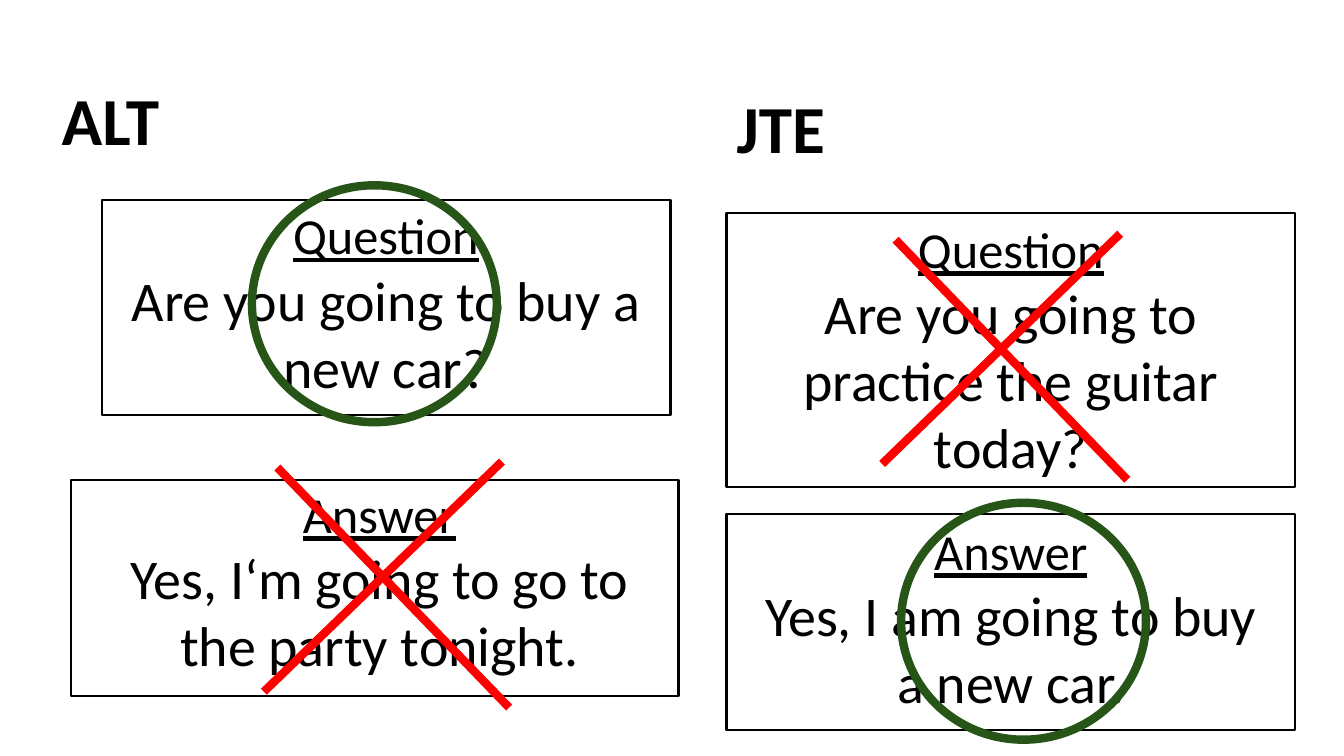
from typing import NamedTuple

from pptx import Presentation, util as u
from pptx.dml.color import RGBColor
from pptx.enum import shapes, text
from pptx.oxml.ns import qn
from lxml import etree

COLORS = {"ink": "000000", "wrong": "FF0000", "right": "275417"}
FONT = "Calibri"


class Box(NamedTuple):
    """Left, top, width and height in centimetres."""
    x: float
    y: float
    w: float
    h: float

    def emu(self) -> list[int]:
        return [u.Cm(v) for v in self]


class Card(NamedTuple):
    label: str
    sentence: str
    frame: Box
    words: Box


class Heading(NamedTuple):
    idx: int
    label: str
    box: Box


class Mark(NamedTuple):
    x: float
    y: float


HEADINGS = [
    Heading(1, "ALT", Box(1.3, 1.88, 14.33, 2.29)),
    Heading(3, "JTE", Box(18.31, 2.08, 14.4, 2.29)),
]
CARDS = [
    Card("Question", "Are you going to buy a new car?",
         Box(2.57, 5.03, 14.33, 5.44), Box(2.92, 5.03, 13.61, 5.21)),
    Card("Answer", "Yes, I‘m going to go to the party tonight.",
         Box(1.78, 12.09, 15.32, 5.44), Box(2.29, 12.04, 14.55, 5.21)),
    Card("Question", "Are you going to practice the guitar today?",
         Box(18.31, 5.36, 14.33, 6.91), Box(18.31, 5.36, 14.33, 6.93)),
    Card("Answer", "Yes, I am going to buy a new car.",
         Box(18.31, 12.95, 14.33, 5.44), Box(18.67, 12.98, 13.61, 5.21)),
]
CROSSES = [Mark(22.23, 5.89), Mark(6.65, 11.63)]
CROSS_STROKES = [(6, 0, 0, 5.8), (6.18, 6.2, 0.34, 0.15)]
RINGS = [Mark(6.35, 4.67), Mark(22.71, 12.67)]
RING_W, RING_H = 6.17, 5.97


def color(name: str) -> RGBColor:
    return RGBColor.from_string(COLORS[name])


def style(p, size: float, bold: bool = False, underline: bool = False) -> None:
    for r in p.runs:
        r.font.name, r.font.size = FONT, u.Pt(size)
        r.font.bold, r.font.underline = bold, underline
        r.font.color.rgb = color("ink")


def set_line(sp, name: str, width: float) -> None:
    sp.line.color.rgb = color(name)
    sp.line.width = u.Pt(width)


def add_outline(s, kind, box: Box, name: str, width: float) -> None:
    sp = s.shapes.add_shape(kind, *box.emu())
    sp.shadow.inherit = False
    sp.fill.background()
    set_line(sp, name, width)


def add_heading(s, heading: Heading) -> None:
    sp = s.placeholders[heading.idx]
    sp.left, sp.top, sp.width, sp.height = heading.box.emu()
    tf = sp.text_frame
    tf.text = heading.label
    tf.vertical_anchor = text.MSO_ANCHOR.BOTTOM
    tf.auto_size = text.MSO_AUTO_SIZE.NONE
    p = tf.paragraphs[0]
    p.line_spacing, p.space_before = 0.9, u.Pt(10)
    style(p, 48, bold=True)


def add_card(s, card: Card) -> None:
    add_outline(s, shapes.MSO_SHAPE.RECTANGLE, card.frame, "ink", 1.5)
    tf = s.shapes.add_textbox(*card.words.emu()).text_frame
    tf.word_wrap = True
    tf.auto_size = text.MSO_AUTO_SIZE.SHAPE_TO_FIT_TEXT
    tf.text = f"{card.label}\n{card.sentence}"
    label, sentence = tf.paragraphs
    style(label, 36, underline=True)
    style(sentence, 40)
    for p in tf.paragraphs:
        p.alignment = text.PP_ALIGN.CENTER


def add_cross(s, mark: Mark) -> None:
    for x1, y1, x2, y2 in CROSS_STROKES:
        sp = s.shapes.add_connector(
            shapes.MSO_CONNECTOR.STRAIGHT,
            u.Cm(mark.x + x1), u.Cm(mark.y + y1),
            u.Cm(mark.x + x2), u.Cm(mark.y + y2))
        set_line(sp, "wrong", 6)
        etree.SubElement(sp._element.spPr, qn("a:effectLst"))


def main() -> None:
    prs = Presentation()
    prs.slide_width, prs.slide_height = u.Cm(33.87), u.Cm(19.05)
    s = prs.slides.add_slide(prs.slide_layouts.get_by_name("Comparison"))

    # Column headings; unused placeholders go
    for heading in HEADINGS:
        add_heading(s, heading)
    used = {heading.idx for heading in HEADINGS}
    for sp in list(s.placeholders):
        if sp.placeholder_format.idx not in used:
            sp._element.getparent().remove(sp._element)

    # Question and answer cards
    for card in CARDS:
        add_card(s, card)

    # Wrong and right marks
    for mark in CROSSES:
        add_cross(s, mark)
    for mark in RINGS:
        add_outline(s, shapes.MSO_SHAPE.OVAL,
                    Box(mark.x, mark.y, RING_W, RING_H), "right", 6)

    prs.save("out.pptx")


if __name__ == "__main__":
    main()
